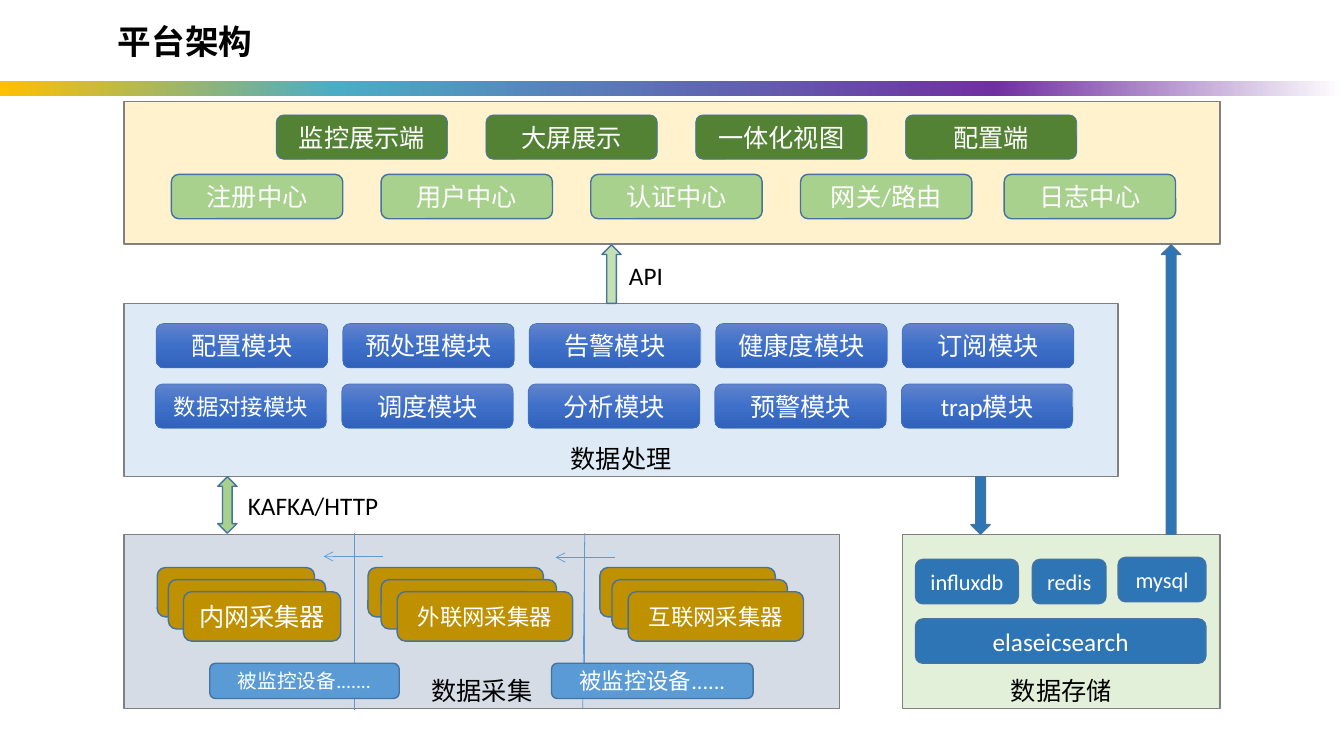
"""Draw the platform architecture slide."""
from dataclasses import dataclass

from lxml import etree
from pptx import Presentation, util as u
from pptx.dml.color import RGBColor
from pptx.enum import shapes, text
from pptx.oxml.ns import qn

WHITE = RGBColor(0xFF, 0xFF, 0xFF)
BLACK = RGBColor(0, 0, 0)
GREY = RGBColor(0x80, 0x80, 0x80)
EDGE = RGBColor(0x43, 0x73, 0x9E)
ROYAL = RGBColor(0x44, 0x72, 0xC4)
SKY = RGBColor(0x5B, 0x9B, 0xD5)
OCEAN = RGBColor(0x2E, 0x75, 0xB6)
GOLD = RGBColor(0xBF, 0x90, 0x00)
LEAF = RGBColor(0xA9, 0xD1, 0x8E)
MINT = RGBColor(0xC5, 0xE0, 0xB4)
FOREST = RGBColor(0x54, 0x82, 0x35)
CREAM = RGBColor(0xFF, 0xF2, 0xCC)
ICE = RGBColor(0xDE, 0xEB, 0xF7)
SLATE = RGBColor(0xD6, 0xDC, 0xE5)
PALE = RGBColor(0xE2, 0xF0, 0xD9)
RAINBOW = ((0, RGBColor(0xFF, 0xC0, 0x00)), (25, RGBColor(0x4B, 0xAC, 0xC6)),
           (74, RGBColor(0x70, 0x30, 0xA0)), (100, WHITE))
GLOSS = ((0, RGBColor(0x61, 0x83, 0xCB)), (50, RGBColor(0x3E, 0x70, 0xCA)),
         (100, RGBColor(0x30, 0x62, 0xBB)))
LATIN, HAN = "Calibri", "Noto Sans CJK SC"
KIND = shapes.MSO_SHAPE
ROUND = KIND.ROUNDED_RECTANGLE


@dataclass(frozen=True)
class Style:
    fill: RGBColor | tuple
    line: RGBColor | None = EDGE
    width: float = 1
    kind: KIND = ROUND
    angle: int = 270


@dataclass(frozen=True)
class Box:
    x: float
    y: float
    w: float
    h: float
    words: str = ""
    size: int = 18


@dataclass(frozen=True)
class Line:
    x: float
    y: float
    to_x: float
    to_y: float
    arrow: bool = False


@dataclass(frozen=True)
class Row:
    x: float
    y: float
    step: float
    names: tuple
    style: Style


@dataclass(frozen=True)
class Stack:
    spots: tuple
    w: float
    words: str
    size: int


BAND = Style(RAINBOW, None, kind=KIND.RECTANGLE, angle=0)
SHOW = Style(FOREST, ROYAL, 0.5)
HUB = Style(LEAF)
MODULE = Style(GLOSS, ROYAL, 0.5)
STORE = Style(OCEAN)
AGENT = Style(GOLD)
DEVICE = Style(SKY)

PANELS = (
    (Box(1.23, 5.3, 7.1, 1.73, "数据采集"), SLATE),
    (Box(1.23, 3.01, 9.86, 1.72, "数据处理"), ICE),
    (Box(8.95, 5.3, 3.15, 1.73, "数据存储"), PALE),
    (Box(1.23, 1.01, 10.87, 1.41), CREAM),
)
ARROWS = (
    (Box(2.16, 4.73, 0.19, 0.56), KIND.UP_DOWN_ARROW, LEAF),
    (Box(9.63, 4.73, 0.19, 0.57), KIND.DOWN_ARROW, OCEAN),
    (Box(11.52, 2.43, 0.19, 2.87), KIND.UP_ARROW, OCEAN),
    (Box(5.97, 2.43, 0.19, 0.58), KIND.UP_ARROW, MINT),
)
TAGS = (Box(2.36, 4.82, 1.78, 0.4, "KAFKA/HTTP"), Box(6.14, 2.53, 0.77, 0.4, "API"))
ROWS = (
    Row(2.74, 1.14, 2.08, ("监控展示端", "大屏展示", "一体化视图", "配置端"), SHOW),
    Row(1.7, 1.73, 2.08, ("注册中心", "用户中心", "认证中心", "网关/路由"), HUB),
    Row(9.96, 1.73, 0, ("日志中心",), HUB),
    Row(1.55, 3.21, 1.85,
        ("配置模块", "预处理模块", "告警模块", "健康度模块", "订阅模块"), MODULE),
    Row(1.54, 3.81, 1.85,
        ("数据对接模块", "调度模块", "分析模块", "预警模块", "trap模块"), MODULE),
)
STORES = (
    Box(9.08, 6.14, 2.88, 0.44, "elaseicsearch"),
    Box(9.08, 5.55, 1.02, 0.44, "influxdb", 16),
    Box(11.09, 5.53, 0.87, 0.44, "mysql", 16),
    Box(10.24, 5.55, 0.73, 0.44, "redis", 16),
)
STACKS = (
    Stack((1.56, 1.67, 1.82), 1.56, "内网采集器", 18),
    Stack((3.65, 3.78, 3.94), 1.74, "外联网采集器", 16),
    Stack((5.95, 6.07, 6.23), 1.74, "互联网采集器", 16),
)
LINES = (
    Line(3.51, 5.38, 3.51, 6.72), Line(5.8, 5.38, 5.8, 6.72),
    Line(3.51, 5.29, 3.51, 7.04), Line(5.8, 5.29, 5.78, 7.03),
    Line(3.8, 5.52, 3.21, 5.52, True), Line(6.1, 5.53, 5.51, 5.53, True),
)
DEVICES = (
    Box(2.08, 6.58, 1.88, 0.35, "被监控设备.......", 14),
    Box(5.47, 6.58, 2, 0.35, "被监控设备......", 16),
)


def write(frame, words: str, *, size: int = 18, color: RGBColor = BLACK,
          font: str = LATIN, bold: bool = False, center: bool = False) -> None:
    """Put one formatted paragraph in a text frame."""
    frame.word_wrap = True
    para = frame.paragraphs[0]
    para.alignment = text.PP_ALIGN.CENTER if center else text.PP_ALIGN.LEFT
    run = para.add_run()
    run.text = words
    run.font.size, run.font.bold, run.font.name = u.Pt(size), bold, font
    run.font.color.rgb = color
    latin = run.font._element.find(qn("a:latin"))
    latin.addnext(latin.makeelement(qn("a:ea"), {"typeface": HAN}))


def blend(shape, stops: tuple, angle: int) -> None:
    """Fill a shape with a linear gradient."""
    shape.fill.gradient()
    shape.fill.gradient_angle = angle
    steps = shape.element.spPr.find(".//" + qn("a:gsLst"))
    for old in list(steps):
        steps.remove(old)
    for spot, color in stops:
        stop = etree.SubElement(steps, qn("a:gs"), pos=str(spot * 1000))
        etree.SubElement(stop, qn("a:srgbClr"), val=str(color))


def place(box: Box) -> tuple:
    """Return the box's position and size as lengths."""
    return tuple(u.Inches(n) for n in (box.x, box.y, box.w, box.h))


def draw(slide, box: Box, style: Style) -> None:
    """Draw a shape with its centred white text."""
    shape = slide.shapes.add_shape(style.kind, *place(box))
    shape.shadow.inherit = False
    if isinstance(style.fill, RGBColor):
        shape.fill.solid()
        shape.fill.fore_color.rgb = style.fill
    else:
        blend(shape, style.fill, style.angle)
    if style.line is None:
        shape.line.fill.background()
    else:
        shape.line.color.rgb = style.line
        shape.line.width = u.Pt(style.width)
    if box.words:
        write(shape.text_frame, box.words, size=box.size, color=WHITE, center=True)


def label(slide, box: Box, **form) -> None:
    """Add a text box."""
    frame = slide.shapes.add_textbox(*place(box)).text_frame
    write(frame, box.words, size=box.size, **form)
    frame.auto_size = text.MSO_AUTO_SIZE.SHAPE_TO_FIT_TEXT


def rule(slide, line: Line) -> None:
    """Draw a thin line, with an arrowhead if asked."""
    ends = (u.Inches(n) for n in (line.x, line.y, line.to_x, line.to_y))
    link = slide.shapes.add_connector(shapes.MSO_CONNECTOR.STRAIGHT, *ends)
    link.line.color.rgb = SKY
    link.line.width = u.Pt(0.5)
    if line.arrow:
        etree.SubElement(link.line._get_or_add_ln(), qn("a:tailEnd"), type="arrow")
    etree.SubElement(link.element.spPr, qn("a:effectLst"))


def main() -> None:
    """Build and save the slide."""
    deck = Presentation()
    deck.slide_width, deck.slide_height = u.Inches(13.33), u.Inches(7.5)
    slide = deck.slides.add_slide(deck.slide_layouts[6])
    draw(slide, Box(0, 0.8, 13.33, 0.15), BAND)
    label(slide, Box(1.07, 0.16, 9.62, 0.5, "平台架构", 24), font=HAN, bold=True)
    for box, fill in PANELS:
        draw(slide, Box(box.x, box.y, box.w, box.h), Style(fill, GREY, kind=KIND.RECTANGLE))
        if box.words:
            low = box.y + box.h - 0.38
            label(slide, Box(box.x, low, box.w, 0.4, box.words), center=True)
    for box, kind, fill in ARROWS:
        draw(slide, box, Style(fill, kind=kind))
    for tag in TAGS:
        label(slide, tag)
    for row in ROWS:
        for i, name in enumerate(row.names):
            size = 16 if len(name) == 6 and row.style is MODULE and "trap" not in name else 18
            draw(slide, Box(row.x + i * row.step, row.y, 1.7, 0.44, name, size), row.style)
    for stack in STACKS:
        for i, x in enumerate(stack.spots):
            words = stack.words if x == stack.spots[-1] else ""
            draw(slide, Box(x, 5.63 + i * 0.12, stack.w, 0.49, words, stack.size), AGENT)
    for line in LINES:
        rule(slide, line)
    for group, style in ((STORES, STORE), (DEVICES, DEVICE)):
        for box in group:
            draw(slide, box, style)
    deck.save("out.pptx")


if __name__ == "__main__":
    main()
